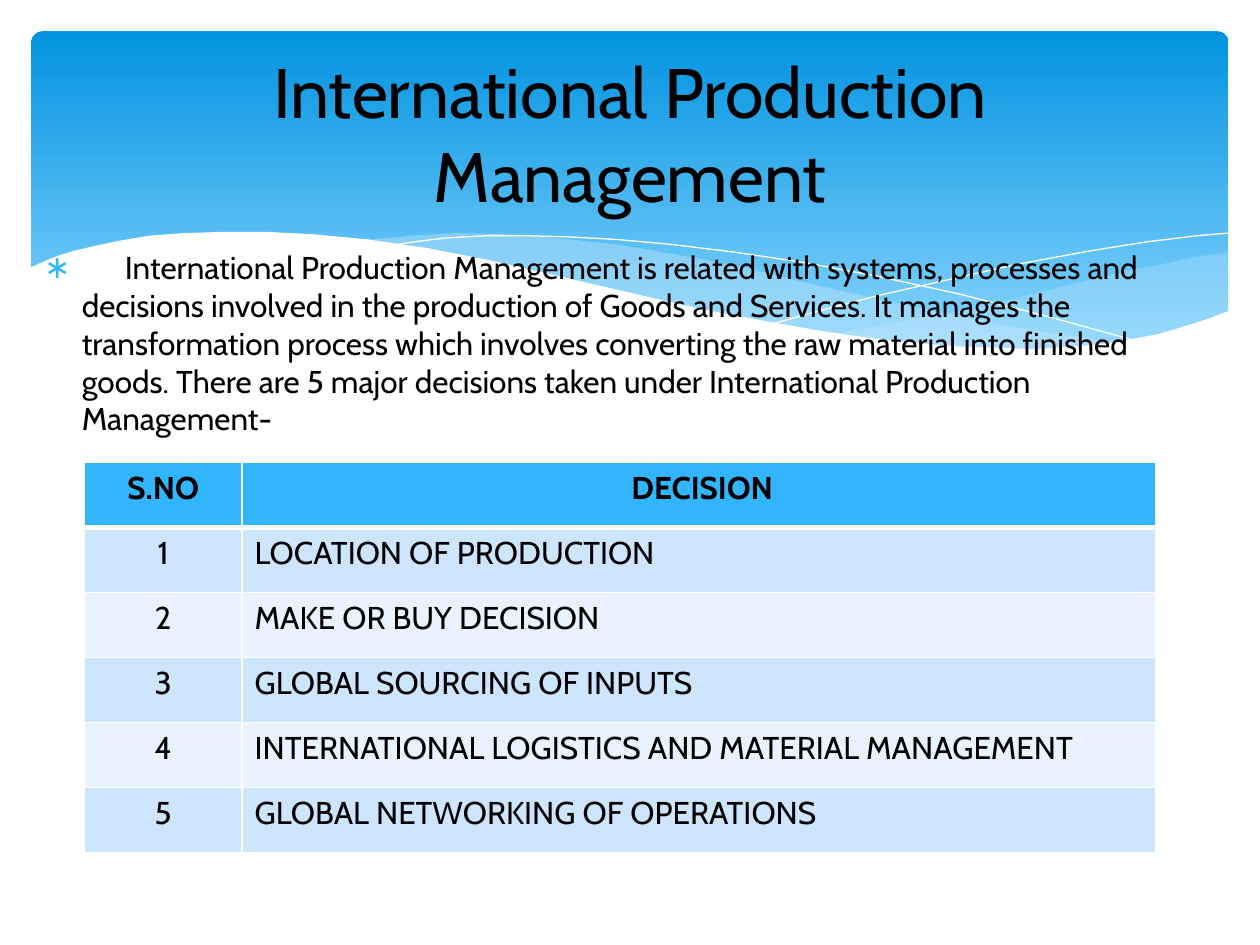
from lxml import etree
from pptx import Presentation
from pptx.dml.color import RGBColor
from pptx.enum import shapes, text
from pptx.oxml import ns
from pptx.util import Cm, Pt

FONT = "Cabin"
COLORS = {
    "top": "0293E0", "bottom": "83D3FE", "mist": "C6E7FC", "white": "FFFFFF",
    "accent": "31B6FD", "band": "CEE5FE", "light": "E8F3FF", "ink": "000000",
}
UNIT = 0.0254
RIGHT_WAVE = [
    (975, 200), (948, 204), (921, 210), (891, 216), (861, 223), (805, 237),
    (753, 248), (706, 257), (661, 265), (691, 269), (719, 272), (745, 275),
    (781, 277), (814, 278), (854, 276), (889, 272), (921, 265), (949, 257),
    (976, 247), (976, 200),
]
WIDE_WAVE = [
    (893, 273), (866, 269), (807, 260), (741, 247), (668, 231), (629, 222),
    (598, 214), (569, 208), (541, 203), (514, 198), (489, 194), (442, 189),
    (399, 186), (361, 185), (328, 187), (286, 191), (323, 196), (362, 203),
    (404, 211), (449, 222), (530, 240), (601, 255), (650, 264), (695, 270),
    (736, 275), (773, 277), (807, 278), (838, 278), (867, 276),
]
FALLING_LINE = [
    (309, 195), (328, 192), (353, 189), (387, 187), (416, 187), (450, 188),
    (489, 190), (533, 194), (582, 200), (636, 208), (695, 219), (760, 233),
    (831, 251), (907, 272),
]
RISING_LINE = [
    (613, 257), (653, 246), (695, 235), (748, 223), (806, 210), (866, 199),
    (910, 192), (951, 187), (975, 185),
]
FRONT_WAVE = [
    (977, 246), (959, 253), (940, 259), (920, 265), (899, 269), (875, 273),
    (850, 275), (823, 277), (793, 276), (761, 275), (726, 272), (688, 268),
    (648, 262), (603, 254), (555, 245), (503, 233), (447, 220), (391, 207),
    (340, 197), (292, 190), (250, 186), (211, 184), (177, 184), (146, 185),
    (119, 187), (95, 191), (76, 195), (59, 199), (46, 203), (36, 207),
    (23, 213), (23, 329), (977, 329),
]
INTRO = (
    "International Production Management is related with systems, processes and "
    "decisions involved in the production of Goods and Services. It manages the "
    "transformation process which involves converting the raw material into "
    "finished goods. There are 5 major decisions taken under International "
    "Production Management-"
)
DECISIONS = [
    "LOCATION OF PRODUCTION",
    "MAKE OR BUY DECISION",
    "GLOBAL SOURCING OF INPUTS",
    "INTERNATIONAL LOGISTICS AND MATERIAL MANAGEMENT",
    "GLOBAL NETWORKING OF OPERATIONS",
]


def rgb(name):
    return RGBColor.from_string(COLORS[name])


def child(parent, tag, **attrs):
    return etree.SubElement(parent, ns.qn(tag), attrs)


def style_text(p, size, bold=False):
    for r in p.runs:
        r.font.name = FONT
        r.font.size = Pt(size)
        r.font.bold = bold
        r.font.color.rgb = rgb("ink")


def add_curve(s, box, points, fill=None, opacity=100):
    left, top = box[:2]
    builder = s.shapes.build_freeform(*points[0], scale=Cm(1) * UNIT)
    builder.add_line_segments(points[1:], close=fill is not None)
    sp = builder.convert_to_shape(Cm(left), Cm(top))
    sp.shadow.inherit = False
    if fill is None:
        sp.fill.background()
        sp.line.color.rgb = rgb("white")
        sp.line.width = 0
        return
    sp.line.fill.background()
    sp.fill.solid()
    sp.fill.fore_color.rgb = rgb(fill)
    if opacity < 100:
        color = sp._element.spPr.find(ns.qn("a:solidFill"))[0]
        child(color, "a:alpha", val=str(opacity * 1000))


def add_backdrop(s, box):
    left, top, width, _ = box
    margin = 0.63
    sp = s.shapes.add_shape(
        shapes.MSO_SHAPE.ROUNDED_RECTANGLE,
        Cm(left + margin), Cm(top + margin), Cm(width - 2 * margin), Cm(6.86))
    sp.adjustments[0] = 0.034
    sp.shadow.inherit = False
    sp.line.fill.background()
    sp.fill.gradient()
    sp.fill.gradient_angle = 270
    stops = sp.fill.gradient_stops
    for stop, name, position in zip(stops, ("top", "bottom"), (0, 0.9)):
        stop.color.rgb = rgb(name)
        stop.position = position
    add_curve(s, box, RIGHT_WAVE, "mist", 29)
    add_curve(s, box, WIDE_WAVE, "mist", 40)
    add_curve(s, box, FALLING_LINE)
    add_curve(s, box, RISING_LINE)
    add_curve(s, box, FRONT_WAVE, "white")


def add_text(s, box, content, size):
    tf = s.shapes.add_textbox(*map(Cm, box)).text_frame
    tf.word_wrap = True
    tf.text = content
    p = tf.paragraphs[0]
    style_text(p, size)
    return tf, p


def add_title(s, box):
    tf, p = add_text(s, box, "International Production Management", 40)
    tf.vertical_anchor = text.MSO_ANCHOR.MIDDLE
    p.alignment = text.PP_ALIGN.CENTER


def add_intro(s, box):
    p = add_text(s, box, "\t" + INTRO, 18)[1]
    p.space_before = Pt(3.6)
    pPr = p._p.get_or_add_pPr()
    pPr.set("marL", str(Cm(0.76)))
    pPr.set("indent", str(Cm(-0.76)))
    child(child(pPr, "a:buClr"), "a:srgbClr", val=COLORS["accent"])
    child(pPr, "a:buFont", typeface=FONT)
    child(pPr, "a:buChar", char="∗")
    child(child(pPr, "a:tabLst"), "a:tab", pos=str(Cm(1.63)), algn="l")


def set_borders(cell, bottom):
    tcPr = cell._tc.get_or_add_tcPr()
    widths = {"L": 1, "R": 1, "T": 1, "B": bottom}
    for i, (side, width) in enumerate(widths.items()):
        ln = etree.Element(ns.qn(f"a:ln{side}"), w=str(Pt(width)))
        child(child(ln, "a:solidFill"), "a:srgbClr", val=COLORS["white"])
        tcPr.insert(i, ln)


def add_decisions(s, box):
    rows = [("S.NO", " DECISION")]
    rows += [(str(i), name) for i, name in enumerate(DECISIONS, 1)]
    table = s.shapes.add_table(len(rows), 2, *map(Cm, box)).table
    number_width = 3.18
    table.columns[0].width = Cm(number_width)
    table.columns[1].width = Cm(box[2] - number_width)
    for i, row in enumerate(rows):
        header = i == 0
        fill = "accent" if header else "band" if i % 2 else "light"
        for j, content in enumerate(row):
            cell = table.cell(i, j)
            cell.fill.solid()
            cell.fill.fore_color.rgb = rgb(fill)
            set_borders(cell, 3 if header else 1)
            cell.text = content
            p = cell.text_frame.paragraphs[0]
            if header or j == 0:
                p.alignment = text.PP_ALIGN.CENTER
            style_text(p, 18, header)


def main():
    prs = Presentation()
    prs.slide_width, prs.slide_height = Cm(25.4), Cm(19.05)
    s = prs.slides.add_slide(prs.slide_layouts[6])
    add_backdrop(s, (0, 0, 25.4, 19.05))
    add_intro(s, (0.64, 4.88, 24.13, 13.54))
    add_title(s, (1.27, 0.94, 22.86, 3.48))
    add_decisions(s, (1.7, 9.32, 21.59, 7.87))
    prs.save("out.pptx")


if __name__ == "__main__":
    main()
